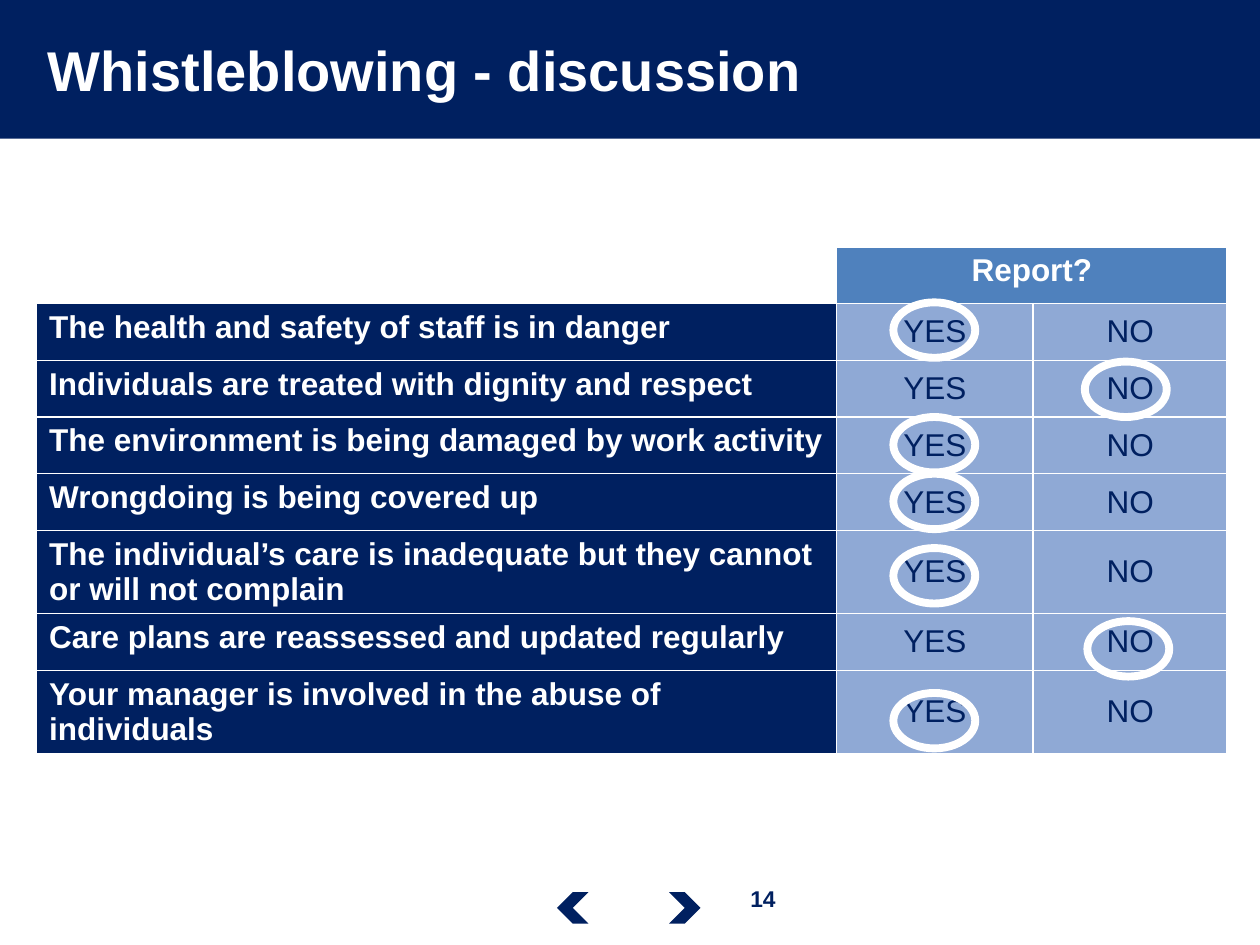
from lxml import etree
from pptx import Presentation
from pptx.dml.color import RGBColor
from pptx.enum import shapes, text
from pptx.oxml.ns import qn
from pptx.util import Inches, Pt

NAVY, WHITE, BLUE, ANSWER = "002060", "FFFFFF", "4F81BD", "2154AC"


def rgb(value):
    return RGBColor.from_string(value)


def write(frame, words, size, color, bold=True, align=text.PP_ALIGN.LEFT):
    para = frame.paragraphs[0]
    para.alignment = align
    span = para.add_run()
    span.text = words
    span.font.name = "Arial"
    span.font.size = Pt(size)
    span.font.bold = bold
    span.font.color.rgb = rgb(color)


deck = Presentation()
deck.slide_width, deck.slide_height = Inches(10), Inches(7.5)
page = deck.slides.add_slide(deck.slide_layouts[5])
center = text.PP_ALIGN.CENTER

# Title band and navigation arrows
RECTANGLE = shapes.MSO_SHAPE.RECTANGLE
CHEVRON = shapes.MSO_SHAPE.CHEVRON
for kind, left, top, width, height, rotation in [
    (RECTANGLE, -0.02, 0, 10.02, 1.1, 0),
    (CHEVRON, 5.31, 7.08, 0.25, 0.25, 0),
    (CHEVRON, 4.42, 7.08, 0.25, 0.25, 180),
]:
    shape = page.shapes.add_shape(
        kind, Inches(left), Inches(top), Inches(width), Inches(height))
    shape.rotation = rotation
    shape.shadow.inherit = False
    shape.fill.solid()
    shape.fill.fore_color.rgb = rgb(NAVY)
    shape.line.fill.background()

number = page.shapes.add_textbox(Inches(5.7), Inches(6.97), Inches(0.71), Inches(0.32))
number.text_frame.word_wrap = True
write(number.text_frame, "14", 13, NAVY, align=center)

# Title, brought in front of the band
title = page.shapes.title
title.left, title.top = Inches(0.28), Inches(0.04)
title.width, title.height = Inches(7.9), Inches(1.01)
title.text_frame.vertical_anchor = text.MSO_ANCHOR.MIDDLE
write(title.text_frame, "Whistleblowing - discussion", 32, WHITE)
page.shapes._spTree.append(title._element)

# Table of situations
situations = [
    "The health and safety of staff is in danger",
    "Individuals are treated with dignity and respect",
    "The environment is being damaged by work activity",
    "Wrongdoing is being covered up",
    "The individual’s care is inadequate but they cannot or will not complain",
    "Care plans are reassessed and updated regularly",
    "Your manager is involved in the abuse of individuals",
]
table = page.shapes.add_table(
    len(situations) + 1, 3, Inches(0.29), Inches(1.96), Inches(9.45), Inches(3.6)).table
for column, width in zip(table.columns, [6.35, 1.56, 1.54]):
    column.width = Inches(width)
for row in table.rows:
    row.height = Inches(0.45)

for cell in table.iter_cells():
    properties = cell._tc.get_or_add_tcPr()
    for side in ("a:lnL", "a:lnR", "a:lnT", "a:lnB"):
        border = etree.SubElement(properties, qn(side), w=str(Pt(1)))
        paint = etree.SubElement(border, qn("a:solidFill"))
        etree.SubElement(paint, qn("a:srgbClr"), val=WHITE)

table.cell(0, 0).fill.background()
header = table.cell(0, 1)
header.merge(table.cell(0, 2))
header.fill.solid()
header.fill.fore_color.rgb = rgb(BLUE)
write(header.text_frame, "Report?", 18, WHITE, align=center)

for row, situation in enumerate(situations, start=1):
    cell = table.cell(row, 0)
    cell.fill.solid()
    cell.fill.fore_color.rgb = rgb(NAVY)
    write(cell.text_frame, situation, 18, WHITE)
    for column, answer in enumerate(["YES", "NO"], start=1):
        cell = table.cell(row, column)
        cell.vertical_anchor = text.MSO_ANCHOR.MIDDLE
        cell.fill.solid()
        cell.fill.fore_color.rgb = rgb(ANSWER)
        tint = cell._tc.tcPr.find(qn("a:solidFill")).find(qn("a:srgbClr"))
        etree.SubElement(tint, qn("a:alpha"), val="50000")
        write(cell.text_frame, answer, 18, NAVY, bold=False, align=center)

# Rings around the right answers
for left, top in [(7.09, 2.4), (8.61, 2.87), (7.09, 3.31), (7.09, 3.76),
                  (7.09, 4.35), (8.63, 4.93), (7.09, 5.5)]:
    ring = page.shapes.add_shape(
        shapes.MSO_SHAPE.OVAL, Inches(left), Inches(top), Inches(0.65), Inches(0.44))
    ring.shadow.inherit = False
    ring.fill.background()
    ring.line.color.rgb = rgb(WHITE)
    ring.line.width = Pt(4.5)

deck.save("out.pptx")
